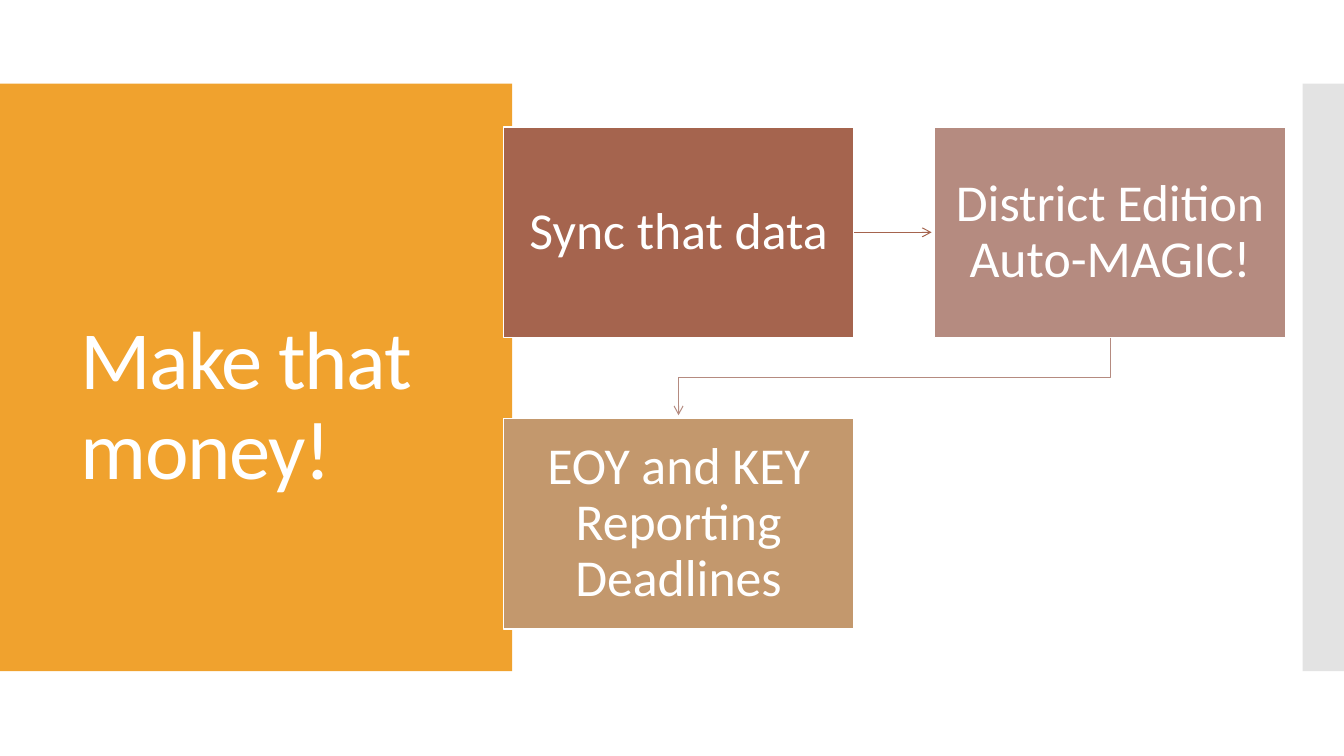
"""Build the "Make that money!" slide: a title panel and a three-step flow."""
from lxml.etree import SubElement
from pptx import Presentation
from pptx.dml.color import RGBColor
from pptx.enum.shapes import MSO_CONNECTOR as Link, MSO_SHAPE as Shape
from pptx.enum.text import MSO_ANCHOR as Anchor, MSO_AUTO_SIZE as Fit, PP_ALIGN as Align
from pptx.oxml.ns import qn
from pptx.util import Inches, Pt

WHITE = RGBColor(0xFF, 0xFF, 0xFF)
GOLD = RGBColor(0xF0, 0xA2, 0x2E)
GREY = RGBColor(0xC8, 0xC8, 0xC8)
RUST = RGBColor(0xA5, 0x64, 0x4E)
ROSE = RGBColor(0xB5, 0x8B, 0x80)
TAN = RGBColor(0xC3, 0x98, 0x6D)

LEFT, TOP = 4.99, 1.26
WIDE, HIGH = 3.48, 2.09
STEP_X, STEP_Y = 4.28, 2.89
GAP = 0.03

deck = Presentation()
deck.slide_width, deck.slide_height = Inches(13.33), Inches(7.5)
slide = deck.slides.add_slide(deck.slide_layouts[5])
shapes = slide.shapes


def add_rect(x, y, w, h, color):
    rect = shapes.add_shape(Shape.RECTANGLE, Inches(x), Inches(y), Inches(w), Inches(h))
    rect.shadow.inherit = False
    rect.fill.solid()
    rect.fill.fore_color.rgb = color
    rect.line.fill.background()
    return rect


def add_text(frame, text, size):
    frame.word_wrap = True
    frame.auto_size = Fit.NONE
    para = frame.paragraphs[0]
    para.line_spacing = 0.9
    run = para.add_run()
    run.text = text
    run.font.name = "Calibri"
    run.font.size = Pt(size)
    run.font.color.rgb = WHITE
    return para, run


panel = add_rect(0, 0.83, 5.08, 5.83, GOLD)
strip = add_rect(12.92, 0.83, 0.41, 5.83, GREY)
tint = strip.fill._xPr.find(qn("a:solidFill"))[0]
SubElement(tint, qn("a:alpha"), val="50000")

title = shapes.title
title.left, title.top = Inches(0.7), Inches(1.42)
title.width, title.height = Inches(4.03), Inches(3.56)
title.text_frame.vertical_anchor = Anchor.BOTTOM
para, run = add_text(title.text_frame, "Make that money!", 59)
para.alignment = Align.LEFT
run.font._element.set("spc", "-100")
shapes._spTree.append(title._element)

steps = [
    ("Sync that data", 0, 0, RUST),
    ("District Edition Auto-MAGIC!", 1, 0, ROSE),
    ("EOY and KEY Reporting Deadlines", 0, 1, TAN),
]
boxes = []
for text, col, row, color in steps:
    box = add_rect(LEFT + col * STEP_X, TOP + row * STEP_Y, WIDE, HIGH, color)
    box.line.color.rgb = WHITE
    box.line.width = Pt(0.85)
    frame = box.text_frame
    frame.margin_left = frame.margin_right = Inches(0.17)
    frame.margin_top = frame.margin_bottom = Inches(0.18)
    frame.vertical_anchor = Anchor.MIDDLE
    para, run = add_text(frame, text, 37)
    para.alignment = Align.CENTER
    boxes.append(box)

mid = TOP + HIGH / 2
arrow = shapes.add_connector(
    Link.STRAIGHT, Inches(LEFT + WIDE), Inches(mid), Inches(LEFT + STEP_X - GAP), Inches(mid)
)
arrow.begin_connect(boxes[0], 3)
SubElement(arrow._element.spPr, qn("a:effectLst"))

low = TOP + HIGH
end = LEFT + WIDE / 2
start = end + STEP_X
bend = TOP + (HIGH + STEP_Y) / 2
path = shapes.build_freeform(Inches(start), Inches(low))
path.add_line_segments(
    [(Inches(x), Inches(y)) for x, y in [(start, bend), (end, bend), (end, TOP + STEP_Y - GAP)]],
    close=False,
)
elbow = path.convert_to_shape()
elbow.shadow.inherit = False
elbow.fill.background()

for link, color in [(arrow, RUST), (elbow, ROSE)]:
    link.line.color.rgb = color
    link.line.width = Pt(0.75)
    SubElement(link.line._get_or_add_ln(), qn("a:tailEnd"), type="arrow")

deck.save("out.pptx")
